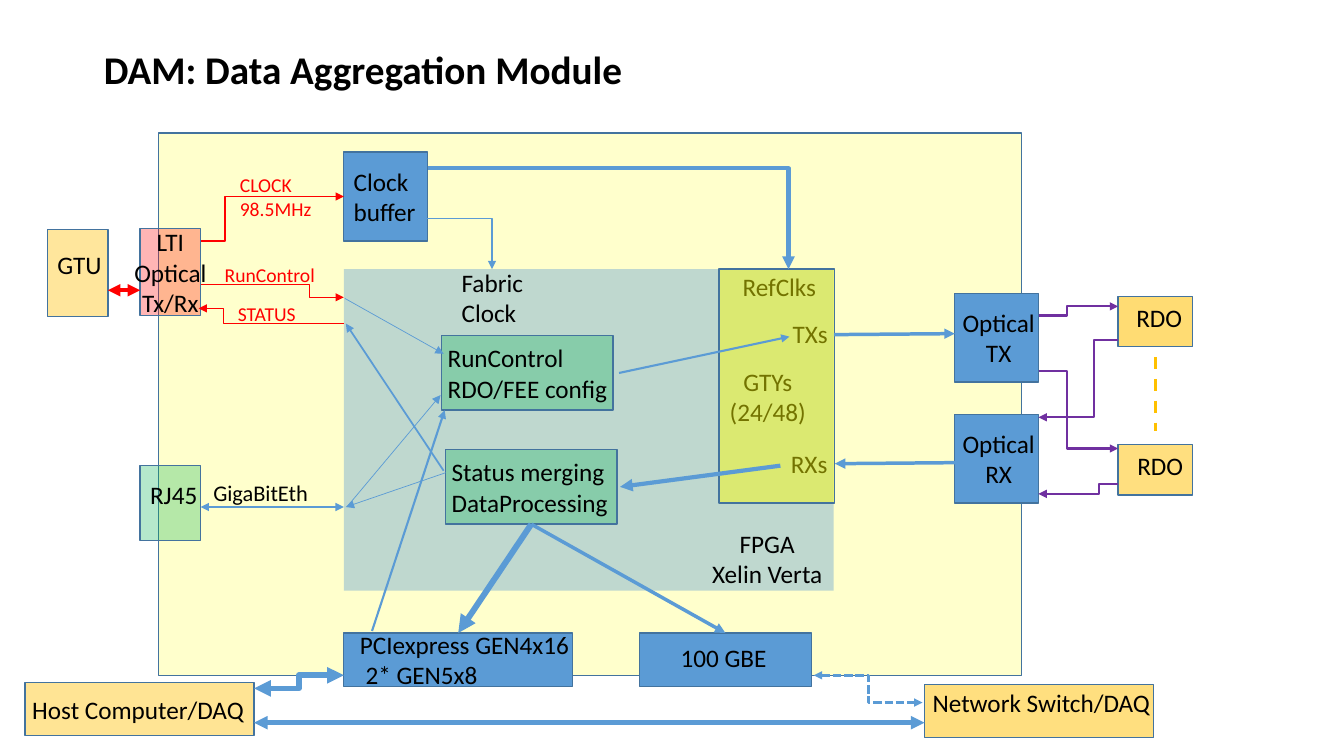
from lxml.etree import SubElement
from pptx import Presentation
from pptx.dml.color import RGBColor
from pptx.enum.dml import MSO_LINE
from pptx.enum.shapes import MSO_CONNECTOR, MSO_SHAPE
from pptx.enum.text import MSO_ANCHOR, MSO_AUTO_SIZE, PP_ALIGN
from pptx.oxml.ns import qn
from pptx.util import Inches, Pt

BLUE, EDGE, BLACK = "5B9BD5", "43739E", "000000"
RED, YELLOW, AMBER, GREEN, PURPLE = "FF0000", "FFFF00", "FFC000", "00B050", "7030A0"
LEFT, CENTER = PP_ALIGN.LEFT, PP_ALIGN.CENTER
color = RGBColor.from_string

presentation = Presentation()
presentation.slide_width = Inches(13.33)
presentation.slide_height = Inches(7.5)
slide = presentation.slides.add_slide(presentation.slide_layouts[5])


def write(shape, lines, size, text_color, alignment, bold=False):
    frame = shape.text_frame
    for index, line in enumerate(lines):
        paragraph = frame.paragraphs[0] if index == 0 else frame.add_paragraph()
        paragraph.alignment = alignment
        run = paragraph.add_run()
        run.text = line
        run.font.name = "Calibri"
        run.font.size = Pt(size)
        run.font.bold = bold
        run.font.color.rgb = color(text_color)


def add_box(left, top, width, height, fill, opacity=100, outlined=True):
    shape = slide.shapes.add_shape(MSO_SHAPE.RECTANGLE, Inches(left), Inches(top),
                                   Inches(width), Inches(height))
    shape.shadow.inherit = False
    shape.fill.solid()
    shape.fill.fore_color.rgb = color(fill)
    if opacity < 100:
        fill_element = shape.fill._xPr.find(qn("a:solidFill"))[0]
        SubElement(fill_element, qn("a:alpha"), val=str(opacity * 1000))
    if outlined:
        shape.line.color.rgb = color(EDGE)
        shape.line.width = Pt(1)
    else:
        shape.line.fill.background()
    return shape


# Title
title = slide.shapes.title
title.left, title.top, title.width, title.height = map(Inches, (0.93, 0.4, 6, 0.57))
title.text_frame.auto_size = MSO_AUTO_SIZE.NONE
title.text_frame.vertical_anchor = MSO_ANCHOR.MIDDLE
write(title, ["DAM: Data Aggregation Module"], 28, BLACK, LEFT, bold=True)

# Module board and FPGA area
add_box(1.57, 1.32, 8.56, 5.38, YELLOW, 20)
add_box(3.41, 2.67, 4.86, 3.19, BLUE, 39, outlined=False)

# Blocks: position, fill, opacity, lines, alignment, left inset, bottom inset
blocks = [
    (1.39, 2.27, 0.6, 0.86, RED, 29, ["LTI", "Optical", "Tx/Rx"], CENTER, 0, 0),
    (3.41, 6.28, 2.27, 0.53, BLUE, 100, ["PCIexpress GEN4x16", " 2* GEN5x8"], LEFT, 0.16, 0),
    (3.41, 1.51, 0.83, 0.88, BLUE, 100, ["Clock", "buffer"], LEFT, 0.1, 0),
    (0.47, 2.28, 0.6, 0.86, AMBER, 39, ["GTU"], LEFT, 0.1, 0.18),
    (6.34, 6.28, 1.71, 0.53, BLUE, 100, ["100 GBE"], LEFT, 0.41, 0.05),
    (1.39, 4.62, 0.6, 0.74, GREEN, 29, ["RJ45"], LEFT, 0.1, 0.18),
    (9.47, 2.91, 0.83, 0.88, BLUE, 100, ["Optical", "TX"], CENTER, 0.04, 0),
    (9.47, 4.11, 0.83, 0.88, BLUE, 100, ["Optical", "RX"], CENTER, 0.04, 0),
    (11.09, 2.94, 0.74, 0.5, AMBER, 55, ["RDO"], LEFT, 0.18, 0.08),
    (11.09, 4.41, 0.74, 0.5, AMBER, 50, ["RDO"], LEFT, 0.19, 0.08),
    (0.25, 6.77, 2.27, 0.53, AMBER, 42, ["Host Computer/DAQ"], LEFT, 0.07, 0),
    (9.17, 6.79, 2.27, 0.53, AMBER, 50, ["Network Switch/DAQ"], LEFT, 0.08, 0.18),
    (4.38, 3.33, 1.7, 0.74, GREEN, 29, ["RunControl", "RDO/FEE config"], LEFT, 0.06, 0),
    (4.42, 4.46, 1.7, 0.74, GREEN, 29, ["Status merging", "DataProcessing"], LEFT, 0.06, 0),
]
block_shapes = {}
for left, top, width, height, fill, opacity, lines, alignment, inset, lift in blocks:
    shape = add_box(left, top, width, height, fill, opacity)
    frame = shape.text_frame
    frame.word_wrap = alignment == LEFT
    frame.vertical_anchor = MSO_ANCHOR.MIDDLE
    frame.margin_left, frame.margin_bottom = Inches(inset), Inches(lift)
    frame.margin_right = frame.margin_top = 0
    write(shape, lines, 18, BLACK, alignment)
    block_shapes[lines[0]] = shape

# Free labels
labels = [
    (6.71, 5.19, 1.8, 0.71, ["FPGA", "Xelin Verta"], 18, BLACK, CENTER),
    (2.28, 1.67, 0.92, 0.57, ["CLOCK", "98.5MHz"], 14, RED, LEFT),
    (2.13, 2.56, 1.11, 0.34, ["RunControl"], 14, RED, LEFT),
    (2.26, 2.95, 0.78, 0.34, ["STATUS"], 14, RED, LEFT),
    (2.01, 4.7, 1.15, 0.37, ["GigaBitEth"], 16, BLACK, CENTER),
    (4.48, 2.6, 0.82, 0.71, ["Fabric", "Clock"], 18, BLACK, LEFT),
    (7.26, 2.64, 0.94, 0.4, ["RefClks"], 18, BLACK, CENTER),
    (7.13, 3.58, 0.97, 0.71, ["GTYs", "(24/48)"], 18, BLACK, CENTER),
    (7.76, 3.11, 0.55, 0.4, ["TXs"], 18, BLACK, CENTER),
    (7.74, 4.4, 0.57, 0.4, ["RXs"], 18, BLACK, CENTER),
]
for left, top, width, height, lines, size, text_color, alignment in labels:
    label = slide.shapes.add_textbox(Inches(left), Inches(top), Inches(width), Inches(height))
    label.text_frame.word_wrap = False
    write(label, lines, size, text_color, alignment)

# Transceiver area tints the labels beneath it
add_box(7.13, 2.67, 1.15, 2.32, YELLOW, 45)

# Links: start, end, colour, width, arrow ends, bend (None = straight), dash
TAIL, HEAD, BOTH = ("tailEnd",), ("headEnd",), ("headEnd", "tailEnd")
links = [
    # Timing and control
    (1.99, 2.39, 3.41, 1.95, RED, 1, TAIL, 0.17, None),
    (1.99, 2.82, 3.41, 2.95, RED, 1, TAIL, 0.76, None),
    (3.41, 3.21, 1.97, 3.06, RED, 1, TAIL, 0.83, None),
    (1.07, 2.88, 1.39, 2.88, RED, 3, BOTH, None, None),
    (1.99, 5.03, 3.41, 5.03, BLUE, 1.5, BOTH, None, None),
    (4.24, 2.17, 4.88, 2.67, BLUE, 1, TAIL, 1, None),
    (4.24, 1.67, 7.82, 2.67, BLUE, 3, TAIL, 1, None),
    # Readout boards
    (10.3, 3.13, 11.09, 3.04, PURPLE, 1.5, TAIL, 0.36, None),
    (11.09, 4.8, 10.3, 4.9, PURPLE, 1.5, TAIL, 0.24, None),
    (10.3, 3.68, 11.09, 4.45, PURPLE, 1.5, TAIL, 0.36, None),
    (11.09, 3.37, 10.3, 4.14, PURPLE, 1.5, TAIL, 0.3, None),
    (11.46, 3.54, 11.46, 4.28, AMBER, 2.25, (), None, MSO_LINE.DASH),
    (8.27, 3.32, 9.47, 3.31, BLUE, 2.5, TAIL, None, None),
    (8.28, 4.6, 9.48, 4.59, BLUE, 2.5, HEAD, None, None),
    # Host and network
    (8.07, 6.7, 9.15, 6.97, BLUE, 2, BOTH, 0.5, MSO_LINE.SQUARE_DOT),
    (2.52, 6.83, 3.41, 6.7, BLUE, 4, BOTH, 0.5, None),
    (2.52, 7.17, 9.17, 7.17, BLUE, 3.25, BOTH, None, None),
    # Inside the FPGA
    (7.74, 4.62, 6.15, 4.83, BLUE, 3, TAIL, None, None),
    (6.14, 3.7, 7.83, 3.34, BLUE, 1.5, TAIL, None, None),
    (5.27, 5.2, 7.2, 6.28, BLUE, 2.5, TAIL, None, None),
    (5.27, 5.2, 4.54, 6.28, BLUE, 4.25, TAIL, None, None),
    (3.42, 2.96, 4.4, 3.51, BLUE, 0.5, TAIL, None, None),
    (4.4, 4.67, 3.43, 3.21, BLUE, 1.25, TAIL, None, None),
    (3.44, 5.03, 4.37, 3.92, BLUE, 0.5, TAIL, None, None),
    (3.69, 6.26, 4.41, 4.07, BLUE, 1.5, TAIL, None, None),
    (4.42, 4.69, 3.43, 5.03, BLUE, 0.5, TAIL, None, None),
]
outputs = {(7.2, 6.28): "100 GBE", (4.54, 6.28): "PCIexpress GEN4x16"}
for x1, y1, x2, y2, line_color, width, arrows, bend, dash in links:
    kind = MSO_CONNECTOR.STRAIGHT if bend is None else MSO_CONNECTOR.ELBOW
    connector = slide.shapes.add_connector(kind, Inches(x1), Inches(y1), Inches(x2), Inches(y2))
    connector.line.color.rgb = color(line_color)
    connector.line.width = Pt(width)
    if dash is not None:
        connector.line.dash_style = dash
    properties = connector._element.spPr
    if bend is not None:
        guides = properties.find(qn("a:prstGeom")).find(qn("a:avLst"))
        SubElement(guides, qn("a:gd"), name="adj1", fmla=f"val {round(bend * 100000)}")
    for arrow in arrows:
        SubElement(properties.find(qn("a:ln")), qn("a:" + arrow), type="triangle")
    SubElement(properties, qn("a:effectLst"))
    if (x2, y2) in outputs:
        connector.begin_connect(block_shapes["Status merging"], 2)
        connector.end_connect(block_shapes[outputs[x2, y2]], 0)

presentation.save("out.pptx")
